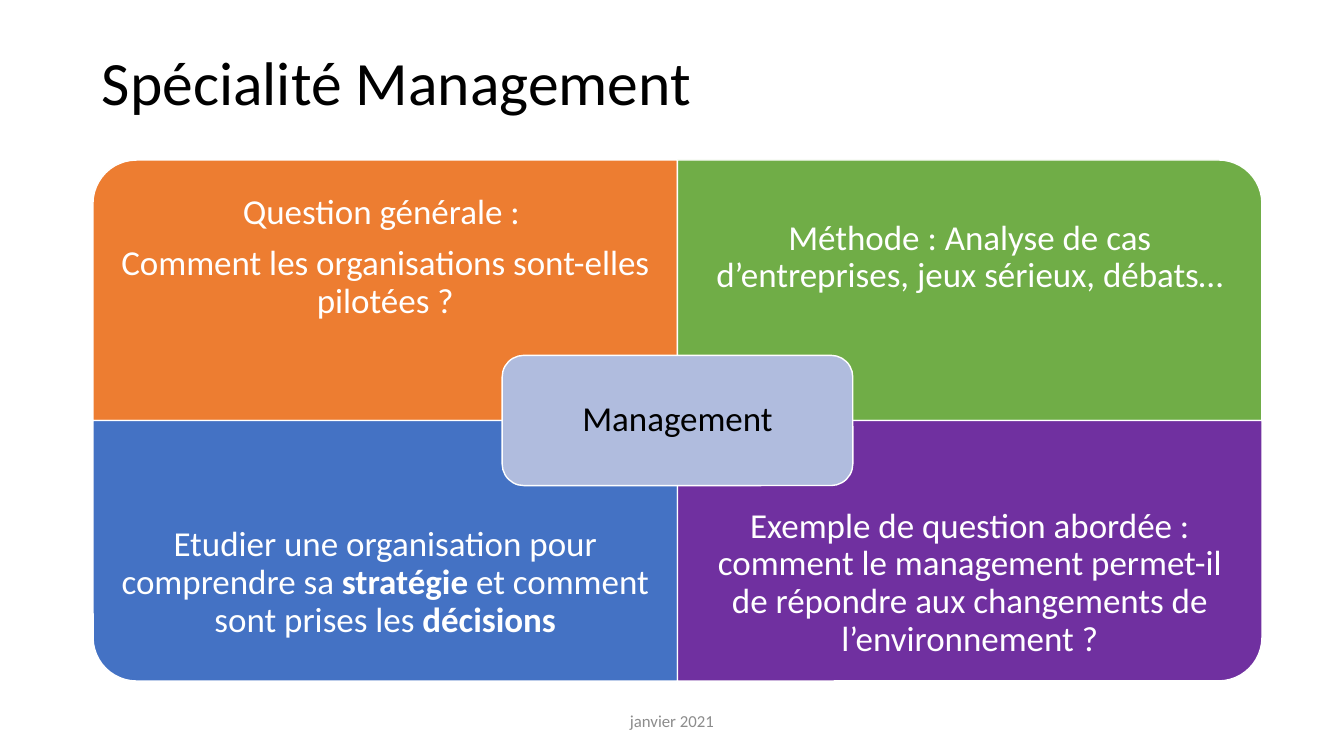
from pptx import Presentation
from pptx import util as u
from pptx.dml.color import RGBColor
from pptx.enum import shapes, text

PX = 914400 / 100.8
WIDTH, HEIGHT = 1344, 756
WHITE, BLACK, GREY = "FFFFFF", "000000", "8C8C8C"

# Row by row: fill, rotation that turns the round corner outwards,
# paragraphs made of (text, bold) runs
QUADRANTS = [
    ("ED7D31", 270, [[("Question générale : ", False)],
                     [("Comment les organisations sont-elles pilotées ?", False)]]),
    ("70AD47", 0, [[("Méthode : Analyse de cas d’entreprises, jeux sérieux, débats…", False)]]),
    ("4472C4", 180, [[("Etudier une organisation pour comprendre sa ", False),
                      ("stratégie", True),
                      (" et comment sont prises les ", False),
                      ("décisions", True)]]),
    ("7030A0", 90, [[("Exemple de question abordée : comment le management permet-il "
                      "de répondre aux changements de l’environnement ?", False)]]),
]


def px(n):
    return u.Emu(round(n * PX))


def color(hex_code):
    return RGBColor.from_string(hex_code)


def add_text(s, box, paragraphs, size, ink, align=text.PP_ALIGN.CENTER,
             inset=(10, 5), spacing=0.9, after=0):
    tf = s.shapes.add_textbox(*map(px, box)).text_frame
    tf.word_wrap = True
    tf.vertical_anchor = text.MSO_ANCHOR.MIDDLE
    tf.margin_left = tf.margin_right = px(inset[0])
    tf.margin_top = tf.margin_bottom = px(inset[1])
    for i, runs in enumerate(paragraphs):
        p = tf.add_paragraph() if i else tf.paragraphs[0]
        p.alignment = align
        p.line_spacing = spacing
        p.space_after = u.Pt(after)
        p.font.size = u.Pt(size)
        p.font.name = "Calibri"
        p.font.color.rgb = color(ink)
        for words, bold in runs:
            r = p.add_run()
            r.text = words
            if bold:
                r.font.bold = True


def add_panel(s, kind, box, fill, rotation=0):
    """Place a white-edged shape that covers the box after its rotation."""
    x, y, w, h = box
    if rotation % 180:
        x, y, w, h = x + (w - h) / 2, y + (h - w) / 2, h, w
    sp = s.shapes.add_shape(kind, *map(px, (x, y, w, h)))
    sp.rotation = rotation
    sp.shadow.inherit = False
    sp.fill.solid()
    sp.fill.fore_color.rgb = color(fill)
    sp.line.color.rgb = color(WHITE)
    sp.line.width = u.Pt(1)


def add_matrix(s, box):
    """Four quadrants around a central label."""
    x, y, w, h = box
    qw, qh = w / 2, h / 2
    text_h = qh * 3 / 4
    for i, (fill, rotation, paragraphs) in enumerate(QUADRANTS):
        row, col = divmod(i, 2)
        qx, qy = x + col * qw, y + row * qh
        add_panel(s, shapes.MSO_SHAPE.ROUND_1_RECTANGLE, (qx, qy, qw, qh), fill, rotation)
        add_text(s, (qx, qy + row * (qh - text_h), qw, text_h), paragraphs, 25, WHITE,
                 inset=(19, 19), after=9)

    lw, lh = qw * 0.6, qh / 2
    label = (x + (w - lw) / 2, y + (h - lh) / 2, lw, lh)
    add_panel(s, shapes.MSO_SHAPE.ROUNDED_RECTANGLE, label, "B0BCDE")
    add_text(s, label, [[("Management", False)]], 25, BLACK, inset=(16, 16), after=9)


def main():
    prs = Presentation()
    prs.slide_width, prs.slide_height = px(WIDTH), px(HEIGHT)
    s = prs.slides.add_slide(prs.slide_layouts[6])
    add_text(s, (92, 13, 1159, 146), [[("Spécialité Management", False)]], 44, BLACK,
             align=text.PP_ALIGN.LEFT)
    add_matrix(s, (93, 160, 1169, 521))
    add_text(s, (445, 701, 454, 40), [[("janvier 2021", False)]], 12, GREY, spacing=1.0)
    prs.save("out.pptx")


if __name__ == "__main__":
    main()
